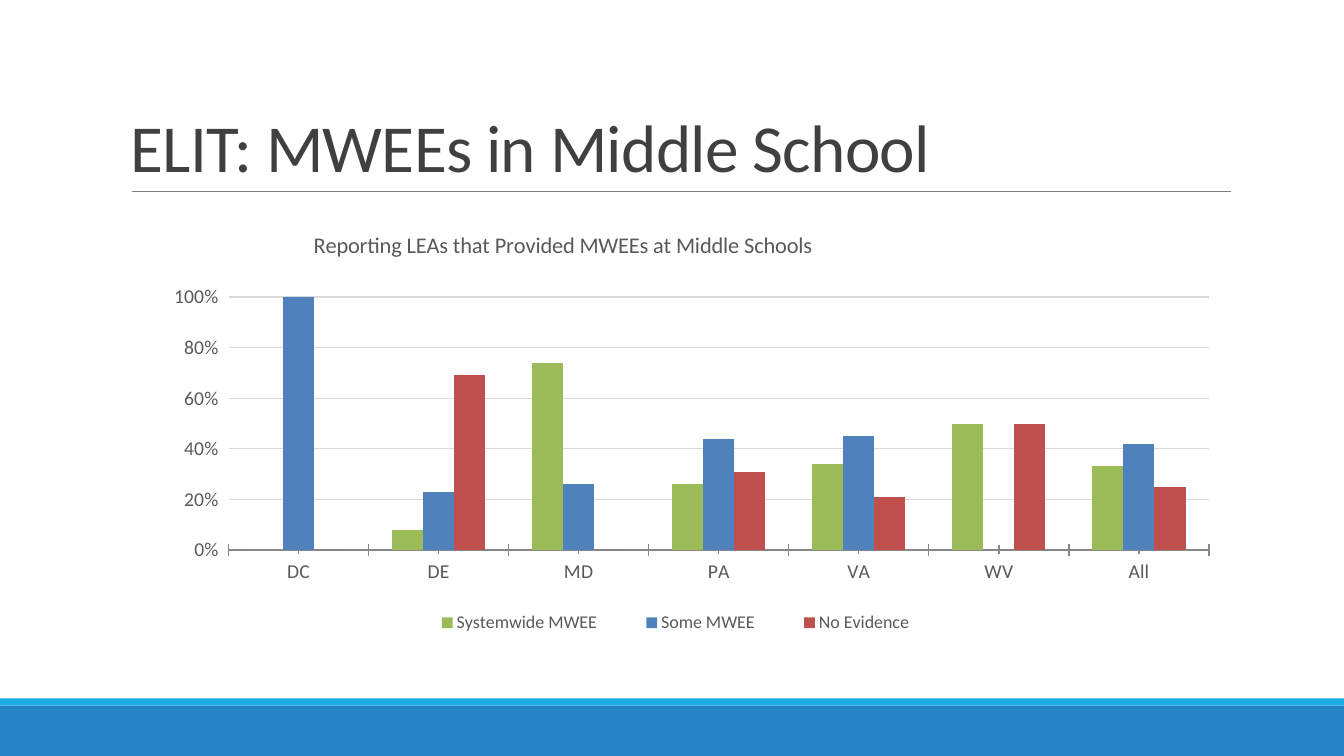
import pptx
import pptx.chart.data
import pptx.dml.color
import pptx.enum.chart
import pptx.enum.shapes
import pptx.enum.text
import pptx.oxml
import pptx.oxml.ns
import pptx.util
from dataclasses import dataclass

EMU_PER_PX = 9144  # 100 px to the inch
SLIDE_WIDTH, SLIDE_HEIGHT = 1333, 750


@dataclass(frozen=True)
class Theme:
    font: str = "Calibri"
    title_size: float = 48
    chart_title_size: float = 16
    axis_size: float = 14
    legend_size: float = 12.8
    title: str = "404040"
    muted: str = "595959"
    rule: str = "808080"
    axis: str = "878787"
    grid: str = "D9D9D9"
    footer: str = "2683C6"
    footer_edge: str = "1CADE4"
    systemwide: str = "9BBB59"
    some: str = "4F81BD"
    no_evidence: str = "C0504D"


THEME = Theme()
STATES = ["DC", "DE", "MD", "PA", "VA", "WV", "All"]
SERIES = [
    ("Systemwide MWEE", THEME.systemwide, [0, 0.08, 0.74, 0.26, 0.34, 0.5, 0.33]),
    ("Some MWEE", THEME.some, [1, 0.23, 0.26, 0.44, 0.45, 0, 0.42]),
    ("No Evidence", THEME.no_evidence, [0, 0.69, 0, 0.31, 0.21, 0.5, 0.25]),
]


def px(*lengths):
    return [pptx.util.Emu(length * EMU_PER_PX) for length in lengths]


def rgb(color):
    return pptx.dml.color.RGBColor.from_string(color)


def format_font(font, size, color):
    font.name = THEME.font
    font.size = pptx.util.Pt(size)
    font.bold = False
    font.color.rgb = rgb(color)


def format_line(line, color, width):
    line.color.rgb = rgb(color)
    line.width = pptx.util.Pt(width)


def write_text(frame, text, *, size, color, line_spacing=None, tracking=None):
    """Fill the first paragraph; tracking is in hundredths of a point."""
    paragraph = frame.paragraphs[0]
    if line_spacing:
        paragraph.line_spacing = line_spacing
    run = paragraph.add_run()
    run.text = text
    format_font(run.font, size, color)
    if tracking:
        run.font._element.set("spc", str(tracking))


def add_band(slide, top, height, color):
    shape = slide.shapes.add_shape(
        pptx.enum.shapes.MSO_SHAPE.RECTANGLE, *px(0, top, SLIDE_WIDTH, height))
    shape.shadow.inherit = False
    shape.fill.solid()
    shape.fill.fore_color.rgb = rgb(color)
    shape.line.fill.background()


def add_rule(slide, left, right, top):
    connector = slide.shapes.add_connector(
        pptx.enum.shapes.MSO_CONNECTOR.STRAIGHT, *px(left, top, right, top))
    format_line(connector.line, THEME.rule, 0.5)
    connector._element.spPr.append(pptx.oxml.parse_xml(
        f"<a:effectLst {pptx.oxml.ns.nsdecls('a')}/>"))


def add_title(slide, text):
    frame = slide.shapes.add_textbox(*px(120, 31, 1100, 159)).text_frame
    frame.word_wrap = True
    frame.vertical_anchor = pptx.enum.text.MSO_ANCHOR.BOTTOM
    write_text(frame, text, size=THEME.title_size, color=THEME.title,
               line_spacing=0.85, tracking=-50)


def place_chart_part(chart, tag, index, target=None, **fractions):
    """Give a chart part a manual layout, as its child number index."""
    part = chart.element.find(f".//{pptx.oxml.ns.qn(tag)}")
    for layout in part.findall(pptx.oxml.ns.qn("c:layout")):
        part.remove(layout)
    settings = [("layoutTarget", target)] if target else []
    settings += [("xMode", "edge"), ("yMode", "edge"), *fractions.items()]
    body = "".join(f'<c:{name} val="{value}"/>' for name, value in settings)
    part.insert(index, pptx.oxml.parse_xml(
        f"<c:layout {pptx.oxml.ns.nsdecls('c')}>"
        f"<c:manualLayout>{body}</c:manualLayout></c:layout>"))


def format_axes(chart):
    cross = pptx.enum.chart.XL_TICK_MARK.CROSS
    for axis in (chart.category_axis, chart.value_axis):
        axis.major_tick_mark = cross
        format_font(axis.tick_labels.font, THEME.axis_size, THEME.muted)
    chart.category_axis.minor_tick_mark = cross
    format_line(chart.category_axis.format.line, THEME.axis, 1)

    value_axis = chart.value_axis
    value_axis.minimum_scale, value_axis.maximum_scale = 0, 1
    value_axis.major_unit = 0.2
    value_axis.tick_labels.number_format = "0%"
    value_axis.tick_labels.number_format_is_linked = False
    value_axis.format.line.fill.background()
    format_line(value_axis.major_gridlines.format.line, THEME.grid, 1)


def add_column_chart(slide, title):
    data = pptx.chart.data.CategoryChartData(number_format="0%")
    data.categories = STATES
    for name, _, values in SERIES:
        data.add_series(name, values)
    chart = slide.shapes.add_chart(
        pptx.enum.chart.XL_CHART_TYPE.COLUMN_CLUSTERED,
        *px(120, 202, 1100, 440), data).chart
    format_font(chart.font, 11, "000000")

    plot = chart.plots[0]
    plot.gap_width = 150
    plot.overlap = 0
    plot.vary_by_categories = False
    for series, (_, color, _) in zip(plot.series, SERIES):
        series.format.fill.solid()
        series.format.fill.fore_color.rgb = rgb(color)
        series.invert_if_negative = False
    format_axes(chart)

    chart.has_title = True
    write_text(chart.chart_title.text_frame, title,
               size=THEME.chart_title_size, color=THEME.muted)
    chart.has_legend = True
    chart.legend.position = pptx.enum.chart.XL_LEGEND_POSITION.BOTTOM
    chart.legend.include_in_layout = False
    format_font(chart.legend.font, THEME.legend_size, THEME.muted)

    place_chart_part(chart, "c:title", 1, x=0.17, y=0.05)
    place_chart_part(chart, "c:plotArea", 0, "inner", x=0.097, y=0.211, w=0.884, h=0.57)
    place_chart_part(chart, "c:legend", 1, x=0.25, y=0.91, w=0.5, h=0.07)


def main():
    presentation = pptx.Presentation()
    presentation.slide_width, presentation.slide_height = px(SLIDE_WIDTH, SLIDE_HEIGHT)
    slide = presentation.slides.add_slide(presentation.slide_layouts[6])
    add_band(slide, 700, 50, THEME.footer)
    add_band(slide, 693, 7, THEME.footer_edge)
    add_rule(slide, 131, 1221, 190)
    add_title(slide, "ELIT: MWEEs in Middle School")
    add_column_chart(slide, "Reporting LEAs that Provided MWEEs at Middle Schools")
    presentation.save("out.pptx")


if __name__ == "__main__":
    main()
